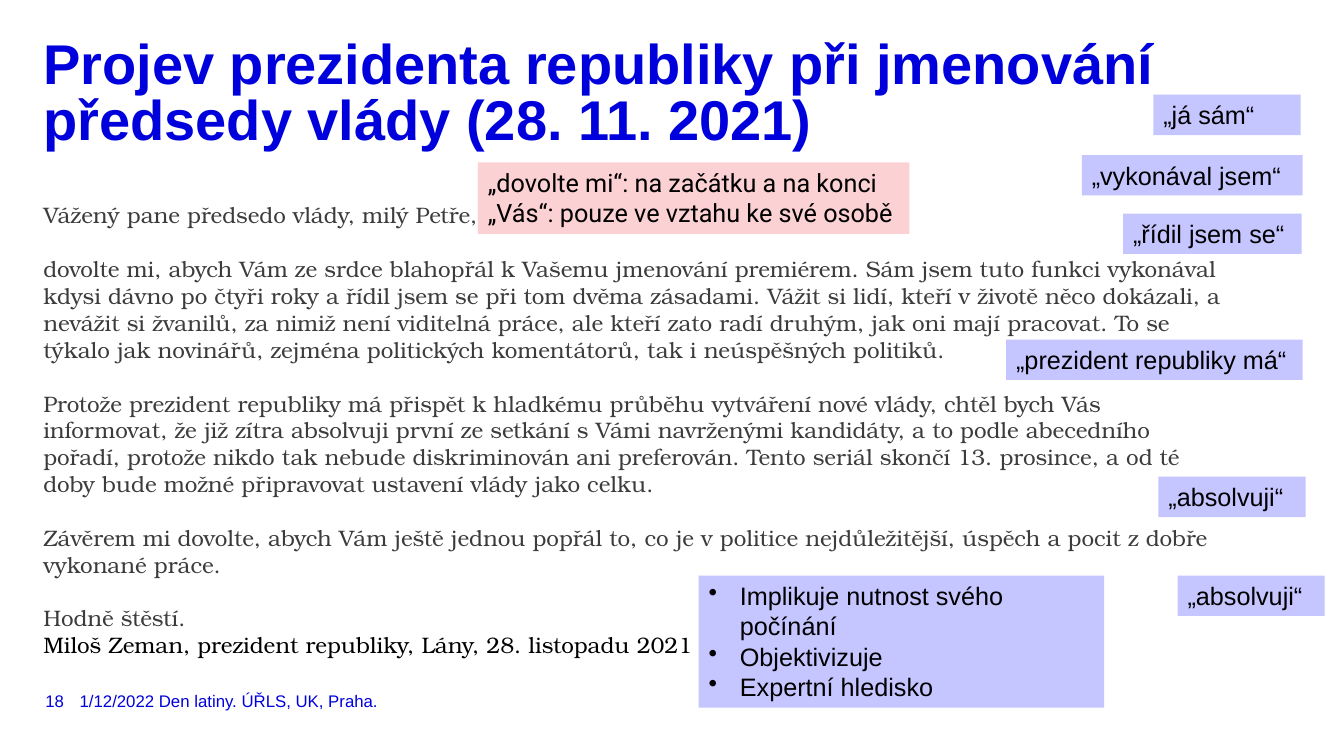
import pptx
import pptx.dml.color
import pptx.enum.text
import pptx.oxml.ns
import pptx.util
from lxml import etree
from pptx.util import Inches

COLORS = {
    "blue": "0000DC",
    "grey": "3C3C3C",
    "black": "000000",
    "lavender": "C5C5FF",
    "pink": "FCD1D4",
}
ANCHOR = pptx.enum.text.MSO_ANCHOR
AUTO_SIZE = pptx.enum.text.MSO_AUTO_SIZE

deck = pptx.Presentation()
deck.slide_width = Inches(13.33)
deck.slide_height = Inches(7.5)
slide = deck.slides.add_slide(deck.slide_layouts[6])


def add_text(text, at, size=18, font="Arial", color="black", fill=None, bold=False,
             wrap=True, anchor=ANCHOR.TOP, bullet=None, gap=0, line=None):
    box = slide.shapes.add_textbox(*[Inches(length) for length in at])
    frame = box.text_frame
    frame.word_wrap = wrap
    frame.vertical_anchor = anchor
    if fill:
        box.fill.solid()
        box.fill.fore_color.rgb = pptx.dml.color.RGBColor.from_string(COLORS[fill])
        frame.auto_size = AUTO_SIZE.SHAPE_TO_FIT_TEXT
    else:
        frame.auto_size = AUTO_SIZE.NONE
        frame.margin_left = frame.margin_right = 0
        frame.margin_top = frame.margin_bottom = 0
    for index, words in enumerate(text.split("\n")):
        paragraph = frame.paragraphs[0] if index == 0 else frame.add_paragraph()
        if index and gap:
            paragraph.space_before = pptx.util.Pt(gap)
        if line:
            paragraph.line_spacing = pptx.util.Pt(line)
        if bullet:
            properties = paragraph._p.get_or_add_pPr()
            properties.set("marL", str(Inches(0.31)))
            properties.set("indent", str(Inches(-0.31)))
            mark = etree.SubElement(properties, pptx.oxml.ns.qn("a:buChar"))
            mark.set("char", bullet)
        run = paragraph.add_run()
        run.text = words
        run.font.size = pptx.util.Pt(size)
        run.font.name = font
        run.font.bold = bold
        run.font.color.rgb = pptx.dml.color.RGBColor.from_string(COLORS[color])
    return frame


speech = "\n".join([
    "Vážený pane předsedo vlády, milý Petře,",
    "dovolte mi, abych Vám ze srdce blahopřál k Vašemu jmenování premiérem. "
    "Sám jsem tuto funkci vykonával kdysi dávno po čtyři roky a řídil jsem se při tom "
    "dvěma zásadami. Vážit si lidí, kteří v životě něco dokázali, a nevážit si žvanilů, "
    "za nimiž není viditelná práce, ale kteří zato radí druhým, jak oni mají pracovat. "
    "To se týkalo jak novinářů, zejména politických komentátorů, tak i neúspěšných politiků.",
    "Protože prezident republiky má přispět k hladkému průběhu vytváření nové vlády, "
    "chtěl bych Vás informovat, že již zítra absolvuji první ze setkání s Vámi navrženými "
    "kandidáty, a to podle abecedního pořadí, protože nikdo tak nebude diskriminován ani "
    "preferován. Tento seriál skončí 13. prosince, a od té doby bude možné připravovat "
    "ustavení vlády jako celku.",
    "Závěrem mi dovolte, abych Vám ještě jednou popřál to, co je v politice "
    "nejdůležitější, úspěch a pocit z dobře vykonané práce.",
    "Hodně štěstí.",
    "Miloš Zeman, prezident republiky, Lány, 28. listopadu 2021",
])
speech_frame = add_text(speech, (0.43, 2, 11.76, 4.87), size=16, font="TeX Gyre Bonum",
                        color="grey", gap=19.2)
signature = speech_frame.paragraphs[-1]
signature.space_before = pptx.util.Pt(0)
signature.runs[0].font.color.rgb = pptx.dml.color.RGBColor.from_string(COLORS["black"])

add_text("Projev prezidenta republiky při jmenování předsedy vlády (28. 11. 2021)",
         (0.43, 0.39, 12.48, 0.43), size=40, color="blue", bold=True, line=40)

quotes = [
    ("„já sám“", 11.44, 0.94, 1.46),
    ("„vykonával jsem“", 10.73, 1.54, 2.19),
    ("„řídil jsem se“", 11.14, 2.12, 1.77),
    ("„prezident republiky má“", 9.98, 3.37, 2.94),
    ("„absolvuji“", 11.49, 4.73, 1.46),
    ("„absolvuji“", 11.68, 5.71, 1.46),
]
for quote, left, top, width in quotes:
    add_text(quote, (left, top, width, 0.4), fill="lavender")

add_text("„dovolte mi“: na začátku a na konci\n„Vás“: pouze ve vztahu ke své osobě",
         (4.74, 1.61, 4.28, 0.71), font="Roboto", fill="pink", wrap=False)
add_text("Implikuje nutnost svého počínání\nObjektivizuje\nExpertní hledisko",
         (6.93, 5.71, 4.02, 1.31), fill="lavender", bullet="•")

add_text("1/12/2022 Den latiny. ÚŘLS, UK, Praha.", (0.79, 6.81, 8.66, 0.28),
         size=12, color="blue", anchor=ANCHOR.MIDDLE)
add_text("18", (0.45, 6.81, 0.28, 0.28), size=12, color="blue", wrap=False,
         anchor=ANCHOR.MIDDLE)

deck.save("out.pptx")
